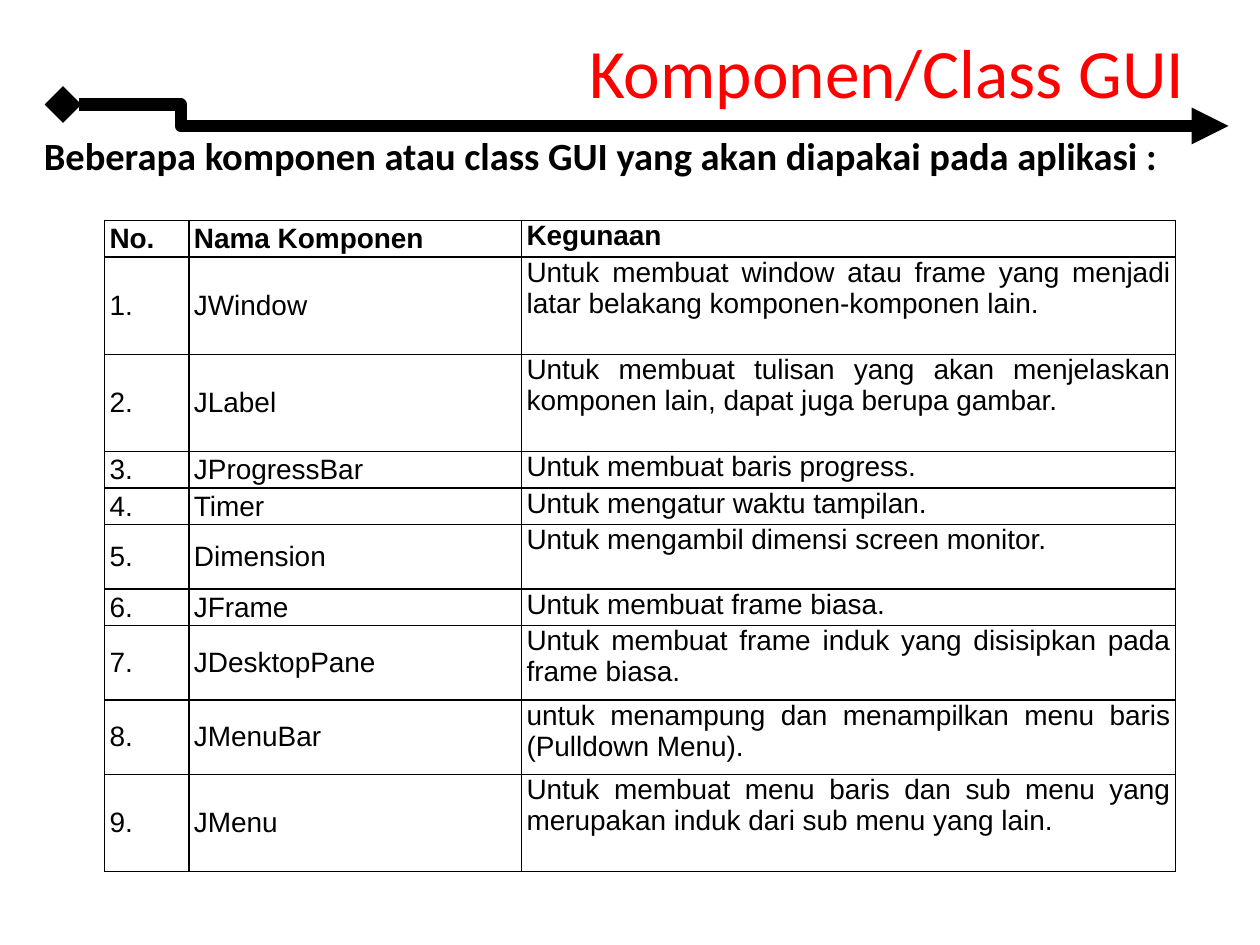
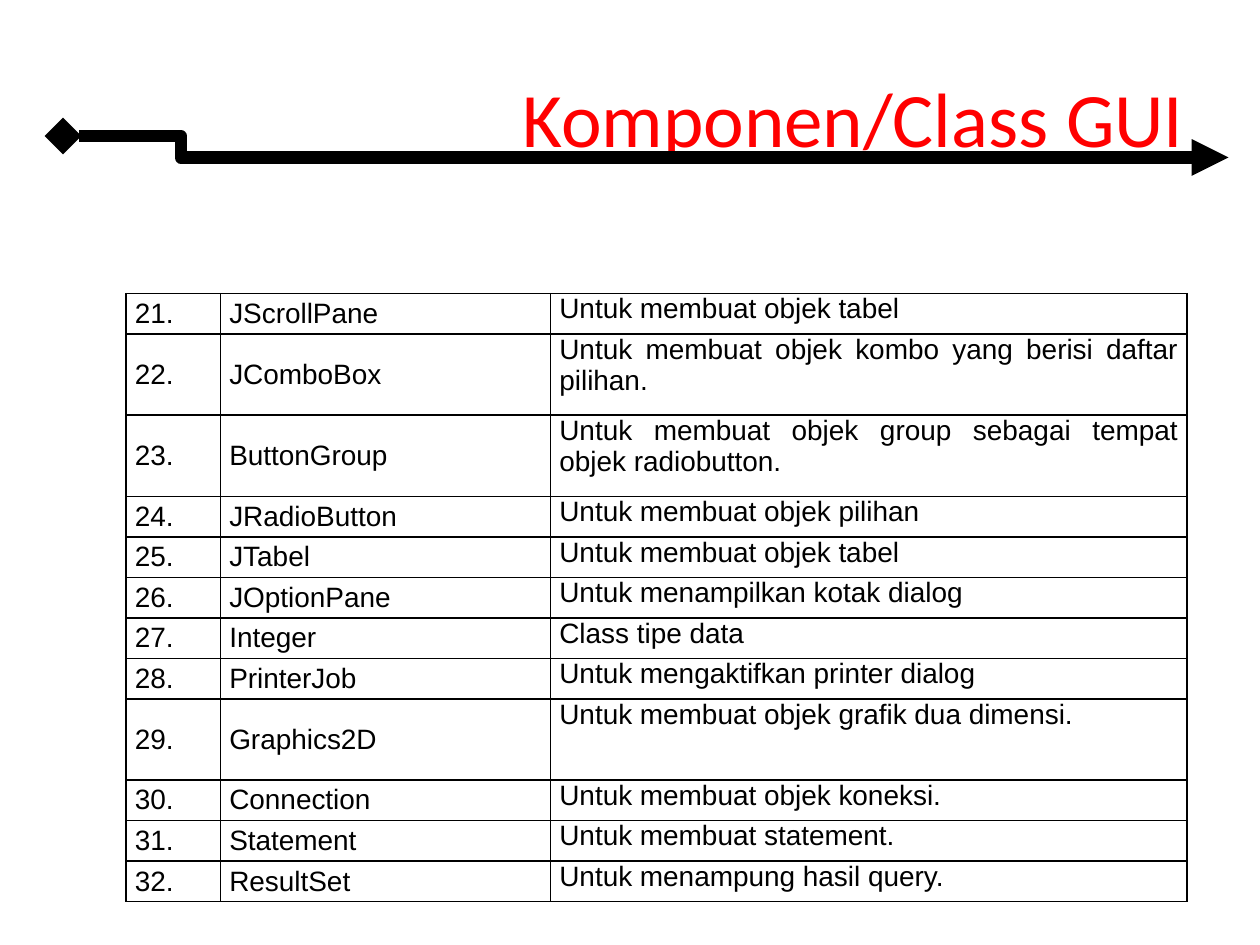
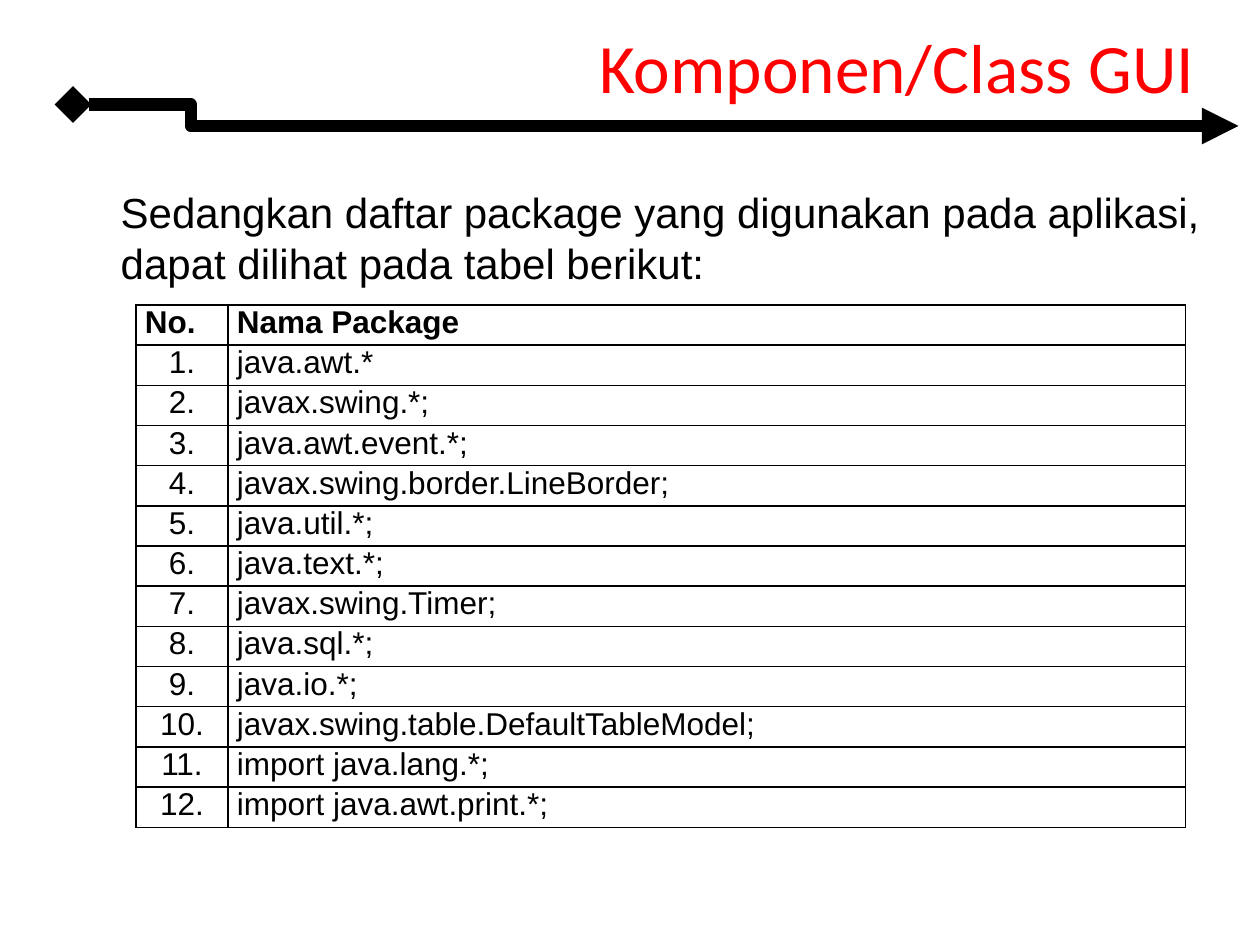
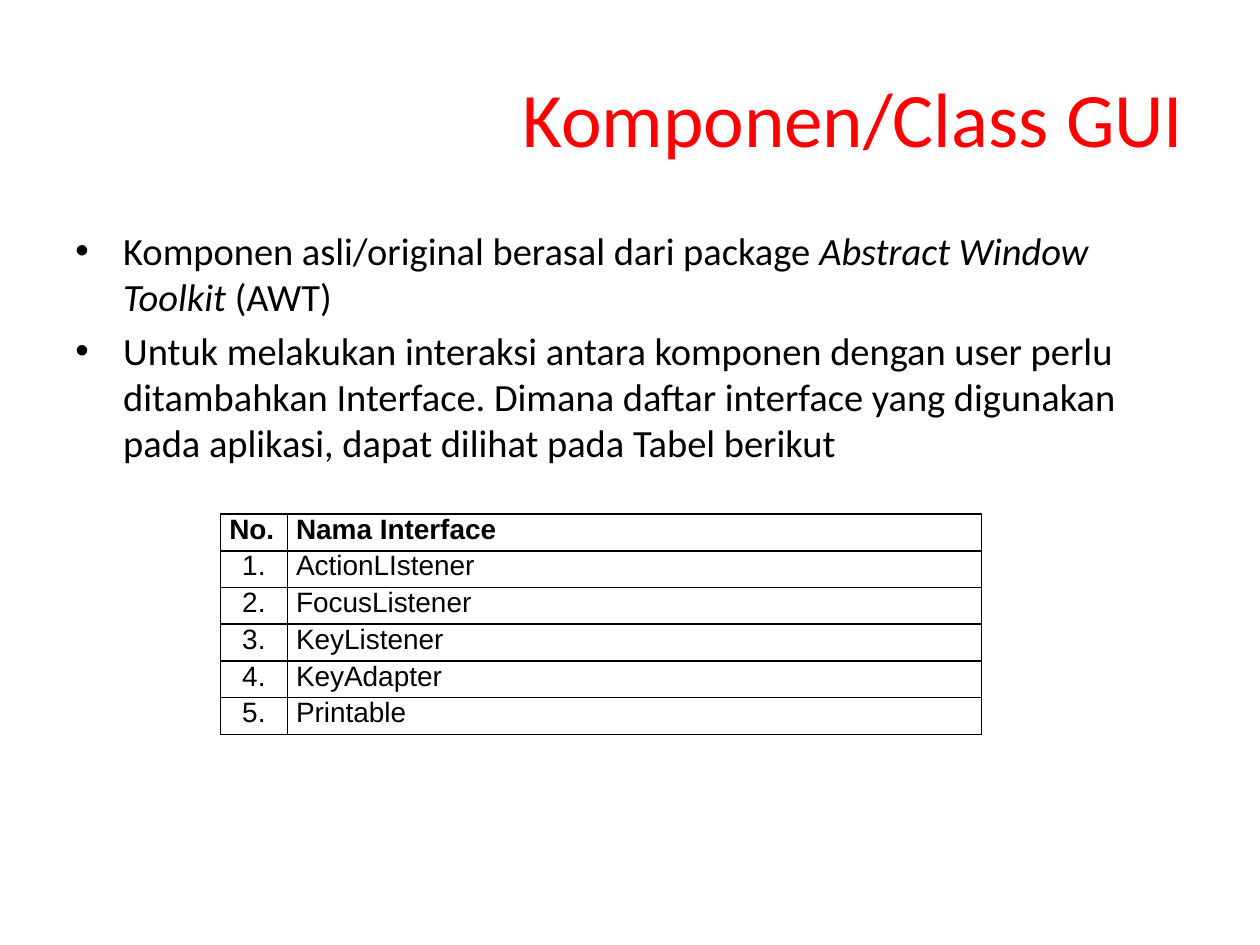
from typing import NamedTuple

from lxml.etree import SubElement
from pptx import Presentation
from pptx.dml.color import RGBColor
from pptx.enum.shapes import MSO_CONNECTOR as Connector
from pptx.enum.text import MSO_ANCHOR as Anchor, MSO_AUTO_SIZE as AutoSize, PP_ALIGN as Align
from pptx.oxml.ns import qn
from pptx.util import Inches, Pt

BLACK = RGBColor(0x00, 0x00, 0x00)
RED = RGBColor(0xFF, 0x00, 0x00)
HEADING_FONT = "Calibri"
TABLE_FONT = "Arial"
TITLE = "Komponen/Class GUI"
TITLE_ONLY = 5
BORDERS = ("a:lnL", "a:lnR", "a:lnT", "a:lnB")


class Box(NamedTuple):
    left: float
    top: float
    width: float
    height: float

    def lengths(self):
        return [Inches(value) for value in self]


class Column(NamedTuple):
    width: float
    align: Align
    anchor: Anchor


COMPONENT_ROWS = [
    ("No.", "Nama Komponen", "Kegunaan"),
    ("1.", "JWindow", "Untuk membuat window atau frame yang menjadi latar belakang komponen-komponen lain."),
    ("2.", "JLabel", "Untuk membuat tulisan yang akan menjelaskan komponen lain, dapat juga berupa gambar."),
    ("3.", "JProgressBar", "Untuk membuat baris progress."),
    ("4.", "Timer", "Untuk mengatur waktu tampilan."),
    ("5.", "Dimension", "Untuk mengambil dimensi screen monitor."),
    ("6.", "JFrame", "Untuk membuat frame biasa."),
    ("7.", "JDesktopPane", "Untuk membuat frame induk yang disisipkan pada frame biasa."),
    ("8.", "JMenuBar", "untuk menampung dan menampilkan menu baris (Pulldown Menu)."),
    ("9.", "JMenu", "Untuk membuat menu baris dan sub menu yang merupakan induk dari sub menu yang lain."),
]
COMPONENT_HEIGHTS = [0.29, 0.77, 0.77, 0.29, 0.29, 0.51, 0.29, 0.59, 0.59, 0.77]

MORE_COMPONENTS = [
    ("JScrollPane", "Untuk membuat objek tabel"),
    ("JComboBox", "Untuk membuat objek kombo yang berisi daftar pilihan."),
    ("ButtonGroup", "Untuk membuat objek group sebagai tempat objek radiobutton."),
    ("JRadioButton", "Untuk membuat objek pilihan"),
    ("JTabel", "Untuk membuat objek tabel"),
    ("JOptionPane", "Untuk menampilkan kotak dialog"),
    ("Integer", "Class tipe data"),
    ("PrinterJob", "Untuk mengaktifkan printer dialog"),
    ("Graphics2D", "Untuk membuat objek grafik dua dimensi."),
    ("Connection", "Untuk membuat objek koneksi."),
    ("Statement", "Untuk membuat statement."),
    ("ResultSet", "Untuk menampung hasil query."),
]
MORE_HEIGHTS = [1, 2, 2, 1, 1, 1, 1, 1, 2, 1, 1, 1]

PACKAGES = [
    "java.awt.*", "javax.swing.*;", "java.awt.event.*;", "javax.swing.border.LineBorder;",
    "java.util.*;", "java.text.*;", "javax.swing.Timer;", "java.sql.*;", "java.io.*;",
    "javax.swing.table.DefaultTableModel;", "import java.lang.*;", "import java.awt.print.*;",
]
INTERFACES = ["ActionLIstener", "FocusListener", "KeyListener", "KeyAdapter", "Printable"]


def add_span(para, text, font=HEADING_FONT, size=22, color=BLACK, bold=False, italic=False):
    span = para.add_run()
    span.text = text
    span.font.name = font
    span.font.size = Pt(size)
    span.font.color.rgb = color
    span.font.bold = bold
    span.font.italic = italic
    return span


def add_title(page, box, size):
    title = page.shapes.title
    title.left, title.top, title.width, title.height = box.lengths()
    frame = title.text_frame
    frame.auto_size = AutoSize.NONE
    frame.vertical_anchor = Anchor.MIDDLE
    para = frame.paragraphs[0]
    para.alignment = Align.RIGHT
    add_span(para, TITLE, size=size, color=RED)


def add_title_arrow(page, box):
    left, top, width, height = box.lengths()
    arrow = page.shapes.add_connector(Connector.ELBOW, left, top, left + width, top + height)
    arrow.line.color.rgb = BLACK
    arrow.line.width = Pt(7)
    properties = arrow._element.spPr
    guides = properties.find(qn("a:prstGeom")).get_or_add_avLst()
    SubElement(guides, qn("a:gd"), name="adj1", fmla="val 10100")
    line = arrow.line._get_or_add_ln()
    SubElement(line, qn("a:headEnd"), type="diamond")
    SubElement(line, qn("a:tailEnd"), type="triangle")
    SubElement(properties, qn("a:effectLst"))


def add_body(page, box):
    frame = page.shapes.add_textbox(*box.lengths()).text_frame
    frame.word_wrap = True
    return frame


def add_bullet(para):
    properties = para._p.get_or_add_pPr()
    properties.set("marL", str(Inches(0.38)))
    properties.set("indent", str(-Inches(0.38)))
    SubElement(properties, qn("a:buFont"), typeface="Arial")
    SubElement(properties, qn("a:buChar"), char="•")


def format_cell(cell, text, column, size, bold, side_margin):
    cell.margin_left = cell.margin_right = Inches(side_margin)
    cell.margin_top = cell.margin_bottom = 0
    cell.vertical_anchor = column.anchor
    para = cell.text_frame.paragraphs[0]
    para.alignment = column.align
    add_span(para, text, font=TABLE_FONT, size=size, bold=bold)
    properties = cell._tc.get_or_add_tcPr()
    for border in BORDERS:
        line = SubElement(properties, qn(border), w=str(Pt(1)))
        SubElement(SubElement(line, qn("a:solidFill")), qn("a:srgbClr"), val=str(BLACK))
    cell.fill.background()


def add_grid(page, box, columns, rows, heights=None, size=16, header=True, side_margin=0.07):
    heights = heights or [1] * len(rows)
    table = page.shapes.add_table(len(rows), len(columns), *box.lengths()).table
    table.first_row = table.horz_banding = False
    for index, column in enumerate(columns):
        table.columns[index].width = Inches(column.width)
    for row_index, row in enumerate(rows):
        table.rows[row_index].height = Inches(box.height * heights[row_index] / sum(heights))
        is_header = header and row_index == 0
        for index, (column, text) in enumerate(zip(columns, row)):
            if is_header and column.align == Align.CENTER:
                column = column._replace(align=Align.LEFT)
            format_cell(table.cell(row_index, index), text, column, size, is_header, side_margin)


def component_columns(*widths):
    styles = [(Align.LEFT, Anchor.MIDDLE), (Align.LEFT, Anchor.MIDDLE), (Align.JUSTIFY, Anchor.TOP)]
    return [Column(width, *style) for width, style in zip(widths, styles)]


def list_columns(number_width, name_width):
    return [Column(number_width, Align.CENTER, Anchor.TOP), Column(name_width, Align.JUSTIFY, Anchor.TOP)]


def numbered(names, heading):
    return [("No.", heading)] + [(f"{number}.", name) for number, name in enumerate(names, 1)]


def build_components(page):
    add_title(page, Box(0.5, 0.17, 9, 0.78), 39.6)
    add_title_arrow(page, Box(0.5, 0.83, 9.25, 0.17))
    para = add_body(page, Box(0.25, 1, 9.25, 0.6)).paragraphs[0]
    para.space_before = Pt(4.4)
    add_span(para, "Beberapa komponen atau class GUI yang akan diapakai pada aplikasi :", bold=True)
    add_grid(page, Box(0.83, 1.75, 8.5, 5.17), component_columns(0.67, 2.64, 5.19),
             COMPONENT_ROWS, COMPONENT_HEIGHTS, side_margin=0.04)


def build_more_components(page):
    add_title(page, Box(0.5, 0.3, 9, 1.25), 44)
    add_title_arrow(page, Box(0.5, 1.08, 9.25, 0.17))
    rows = [(f"{number}.", *entry) for number, entry in enumerate(MORE_COMPONENTS, 21)]
    add_grid(page, Box(1, 2.33, 8.42, 4.83), component_columns(0.75, 2.62, 5.05),
             rows, MORE_HEIGHTS, header=False)


def build_packages(page):
    add_title(page, Box(0.58, 0.17, 9, 0.7), 39.6)
    add_title_arrow(page, Box(0.58, 0.83, 9.25, 0.17))
    para = add_body(page, Box(0.86, 1.42, 8.81, 0.95)).paragraphs[0]
    para.line_spacing = Pt(29.3)
    add_span(para, "Sedangkan daftar package yang digunakan pada aplikasi, dapat dilihat pada tabel berikut:",
             font=TABLE_FONT, size=24)
    add_grid(page, Box(1.08, 2.42, 8.33, 4.15), list_columns(0.73, 7.6),
             numbered(PACKAGES, "Nama Package"), size=18)


def build_interfaces(page):
    add_title(page, Box(0.5, 0.3, 9, 1.25), 44)
    frame = add_body(page, Box(0.5, 1.75, 9, 2.2))
    origin, interaction = frame.paragraphs[0], frame.add_paragraph()
    for para in (origin, interaction):
        para.space_before = Pt(4.4)
        add_bullet(para)
    add_span(origin, "Komponen asli/original berasal dari package ")
    add_span(origin, "Abstract Window Toolkit ", italic=True)
    add_span(origin, "(AWT)")
    add_span(interaction, "Untuk melakukan interaksi antara komponen dengan user perlu ditambahkan Interface. "
                          "Dimana daftar interface yang digunakan pada aplikasi, dapat dilihat pada Tabel berikut")
    add_grid(page, Box(1.75, 4.08, 6.04, 1.75), list_columns(0.53, 5.51),
             numbered(INTERFACES, "Nama Interface"))


def main():
    deck = Presentation()
    deck.slide_width, deck.slide_height = Inches(10), Inches(7.5)
    for build in (build_components, build_more_components, build_packages, build_interfaces):
        build(deck.slides.add_slide(deck.slide_layouts[TITLE_ONLY]))
    deck.save("out.pptx")


if __name__ == "__main__":
    main()
